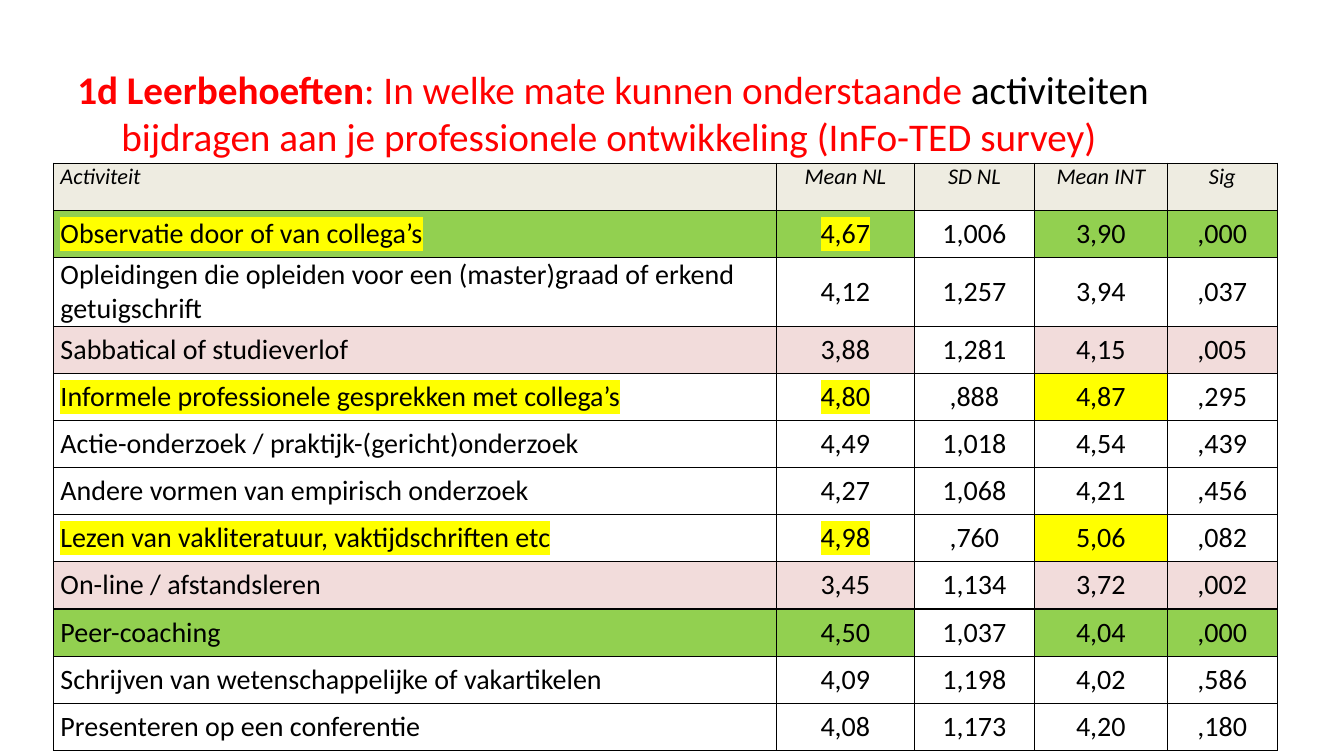
import pptx
import pptx.util
import pptx.dml.color
import pptx.enum.text
import pptx.oxml.ns
import lxml.etree

Pt = pptx.util.Pt
ALIGN = pptx.enum.text.PP_ALIGN
ANCHOR = pptx.enum.text.MSO_ANCHOR

COLORS = {
    "black": "000000",
    "red": "FF0000",
    "head": "EEECE1",
    "green": "92D050",
    "pink": "F2DCDB",
    "yellow": "FFFF00",
}
FONT = "Calibri"
WIDTHS = [516.3, 98.7, 85.7, 95, 78.5]
HEIGHT = 33.7
HEADS = ["Activiteit", "Mean NL", "SD NL", "Mean INT", "Sig"]
ROWS = [
    ("Observatie door of van collega’s", "4,67", "1,006", "3,90", ",000"),
    ("Opleidingen die opleiden voor een (master)graad of erkend getuigschrift",
     "4,12", "1,257", "3,94", ",037"),
    ("Sabbatical of studieverlof", "3,88", "1,281", "4,15", ",005"),
    ("Informele professionele gesprekken met collega’s", "4,80", ",888", "4,87", ",295"),
    ("Actie-onderzoek / praktijk-(gericht)onderzoek", "4,49", "1,018", "4,54", ",439"),
    ("Andere vormen van empirisch onderzoek", "4,27", "1,068", "4,21", ",456"),
    ("Lezen van vakliteratuur, vaktijdschriften etc", "4,98", ",760", "5,06", ",082"),
    ("On-line / afstandsleren", "3,45", "1,134", "3,72", ",002"),
    ("Peer-coaching", "4,50", "1,037", "4,04", ",000"),
    ("Schrijven van wetenschappelijke of vakartikelen", "4,09", "1,198", "4,02", ",586"),
    ("Presenteren op een conferentie", "4,08", "1,173", "4,20", ",180"),
]
FILLS = {1: "green", 3: "pink", 8: "pink", 9: "green"}
MARKED = {1, 4, 7}
PEAKS = {4, 7}


def add_node(parent, tag, **attrs):
    return lxml.etree.SubElement(parent, pptx.oxml.ns.qn(tag), attrs)


def add_run(para, text, size, color="black", bold=False, italic=False, mark=False):
    run = para.add_run()
    run.text = text
    font = run.font
    font.size = Pt(size)
    font.bold = bold
    font.italic = italic
    font.color.rgb = pptx.dml.color.RGBColor.from_string(COLORS[color])
    if mark:
        light = add_node(font._element, "a:highlight")
        add_node(light, "a:srgbClr", val=COLORS["yellow"])
    font.name = FONT


def add_title(slide):
    title = slide.shapes.title
    title.left, title.top, title.width, title.height = Pt(48), Pt(35.3), Pt(864), Pt(90)
    frame = title.text_frame
    frame.word_wrap = True
    frame.auto_size = pptx.enum.text.MSO_AUTO_SIZE.NONE
    frame.vertical_anchor = ANCHOR.MIDDLE
    para = frame.paragraphs[0]
    para.alignment = ALIGN.LEFT
    props = para._p.get_or_add_pPr()
    props.set("marL", str(Pt(31.5)))
    props.set("indent", str(-Pt(31.5)))
    add_run(para, "1d Leerbehoeften", 28, "red", bold=True)
    add_run(para, ": In welke mate kunnen onderstaande ", 28, "red")
    add_run(para, "activiteiten", 28)
    para.add_line_break()
    add_run(para, "bijdragen aan je professionele ontwikkeling (InFo-TED survey)", 28, "red")


def add_edges(cell):
    props = cell._tc.get_or_add_tcPr()
    for side in ("a:lnL", "a:lnR", "a:lnT", "a:lnB"):
        line = add_node(props, side, w=str(Pt(1)))
        add_node(add_node(line, "a:solidFill"), "a:srgbClr", val=COLORS["black"])


def pick_fill(row, col):
    if row == 0:
        return "head"
    if row in PEAKS and col == 3:
        return "yellow"
    return FILLS.get(row) if col != 2 else None


def fill_cell(cell, text, row, col):
    cell.margin_left = cell.margin_right = Pt(5)
    cell.margin_top = cell.margin_bottom = 0
    cell.vertical_anchor = ANCHOR.MIDDLE if row else ANCHOR.TOP
    add_edges(cell)
    color = pick_fill(row, col)
    if color:
        cell.fill.solid()
        cell.fill.fore_color.rgb = pptx.dml.color.RGBColor.from_string(COLORS[color])
    else:
        cell.fill.background()
    para = cell.text_frame.paragraphs[0]
    para.alignment = ALIGN.CENTER if col else ALIGN.LEFT
    add_run(para, text, 20 if row else 16, italic=row == 0,
            mark=row in MARKED and col < 2)


def add_grid(slide):
    data = [HEADS, *ROWS]
    frame = slide.shapes.add_table(len(data), len(HEADS), Pt(38.2), Pt(116.6),
                                   Pt(sum(WIDTHS)), Pt(HEIGHT * len(data)))
    table = frame.table
    table.first_row = False
    table.horz_banding = False
    for col, width in zip(table.columns, WIDTHS):
        col.width = Pt(width)
    for row, texts in enumerate(data):
        table.rows[row].height = Pt(HEIGHT)
        for col, text in enumerate(texts):
            fill_cell(table.cell(row, col), text, row, col)


def main():
    deck = pptx.Presentation()
    deck.slide_width, deck.slide_height = Pt(960), Pt(540)
    slide = deck.slides.add_slide(deck.slide_layouts[5])
    add_title(slide)
    add_grid(slide)
    deck.save("out.pptx")


if __name__ == "__main__":
    main()
